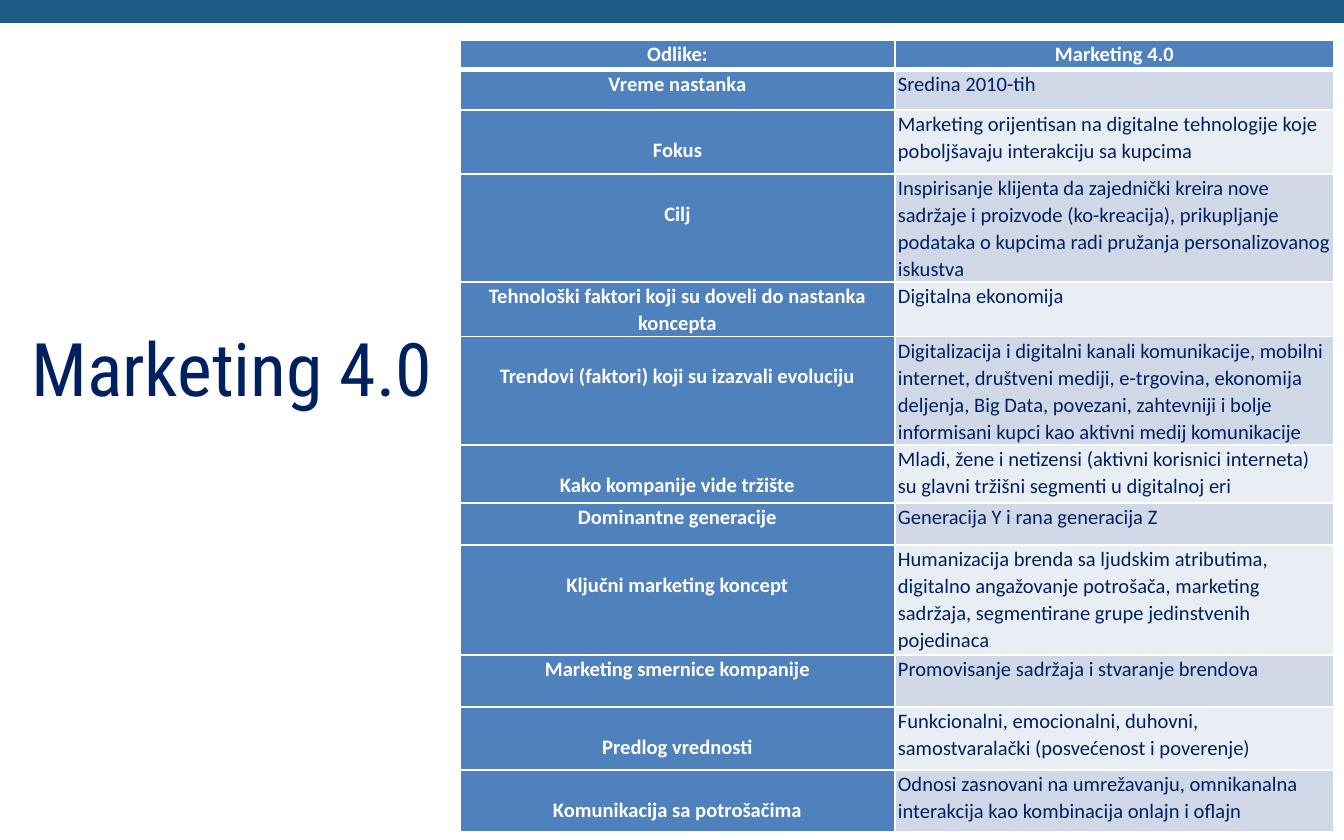
"""Build the Marketing 4.0 feature table slide."""
import pptx
import pptx.dml.color
import pptx.enum.shapes
import pptx.enum.text
import pptx.oxml
import pptx.oxml.ns
import pptx.util

TITLE = "Marketing 4.0"
HEADER = ("Odlike:", "Marketing 4.0", 30, False)
FEATURES = [
    ("Vreme nastanka", "Sredina 2010-tih", 40, False),
    ("Fokus", "Marketing orijentisan na digitalne tehnologije koje poboljšavaju "
     "interakciju sa kupcima", 64, True),
    ("Cilj", "Inspirisanje klijenta da zajednički kreira nove sadržaje i proizvode "
     "(ko-kreacija), prikupljanje podataka o kupcima radi pružanja "
     "personalizovanog iskustva", 108, True),
    ("Tehnološki faktori koji su doveli do nastanka koncepta",
     "Digitalna ekonomija", 54, False),
    ("Trendovi (faktori) koji su izazvali evoluciju",
     "Digitalizacija i digitalni kanali komunikacije, mobilni internet, društveni "
     "mediji, e-trgovina, ekonomija deljenja, Big Data, povezani, zahtevniji i bolje "
     "informisani kupci kao aktivni medij komunikacije", 108, True),
    ("Kako kompanije vide tržište",
     "Mladi, žene i netizensi (aktivni korisnici interneta) su glavni tržišni "
     "segmenti u digitalnoj eri", 58, True),
    ("Dominantne generacije", "Generacija Y i rana generacija Z", 42, False),
    ("Ključni marketing koncept",
     "Humanizacija brenda sa ljudskim atributima, digitalno angažovanje potrošača, "
     "marketing sadržaja, segmentirane grupe jedinstvenih pojedinaca", 110, True),
    ("Marketing smernice kompanije",
     "Promovisanje sadržaja i stvaranje brendova", 52, False),
    ("Predlog vrednosti", "Funkcionalni, emocionalni, duhovni, samostvaralački "
     "(posvećenost i poverenje)", 63, True),
    ("Komunikacija sa potrošačima", "Odnosi zasnovani na umrežavanju, omnikanalna "
     "interakcija kao kombinacija onlajn i oflajn", 62, True),
]
THEME = {
    "bar": "1D5B85", "accent": "4F81BD", "bands": ("D0D8E8", "E9EDF4"),
    "ink": "002060", "white": "FFFFFF",
    "title_font": "Roboto Condensed", "title_size": 39.6,
    "body_font": "Calibri", "body_size": 11, "line_spacing": 1.07,
}
SLIDE_SIZE = (1344, 840)
BAR_BOX = (0, 0, 1344, 23)
TITLE_BOX = (-12, 339, 488, 56)
TABLE_ORIGIN = (460, 40)
COLUMNS = (435, 439)
CELL_INSET = 3
LABEL_DROP = 26


def px(length):
    return round(length * 9144000 / 1344)


def color(name):
    return pptx.dml.color.RGBColor.from_string(name)


def style_text(para, font, size, ink, bold, centered):
    align = pptx.enum.text.PP_ALIGN
    para.alignment = align.CENTER if centered else align.LEFT
    for span in para.runs:
        span.font.name = font
        span.font.size = pptx.util.Pt(size)
        span.font.color.rgb = color(ink)
        span.font.bold = bold


def add_borders(cell, bottom_width):
    properties = cell._tc.get_or_add_tcPr()
    for index, side in enumerate("LRTB"):
        width = pptx.util.Pt(bottom_width if side == "B" else 1)
        properties.insert(index, pptx.oxml.parse_xml(
            f'<a:ln{side} {pptx.oxml.ns.nsdecls("a")} w="{width}"><a:solidFill>'
            f'<a:srgbClr val="{THEME["white"]}"/></a:solidFill></a:ln{side}>'))


def fill_cell(cell, text, fill, is_label, drop, bottom_width):
    cell.margin_left = cell.margin_right = px(CELL_INSET)
    cell.margin_top = px(LABEL_DROP if drop else 0)
    cell.margin_bottom = 0
    cell.vertical_anchor = pptx.enum.text.MSO_ANCHOR.TOP
    cell.fill.solid()
    cell.fill.fore_color.rgb = color(fill)
    add_borders(cell, bottom_width)
    cell.text_frame.text = text
    para = cell.text_frame.paragraphs[0]
    para.line_spacing = THEME["line_spacing"]
    ink = THEME["white"] if is_label else THEME["ink"]
    style_text(para, THEME["body_font"], THEME["body_size"], ink, is_label, is_label)


def add_bar(page):
    bar = page.shapes.add_shape(pptx.enum.shapes.MSO_SHAPE.RECTANGLE, *map(px, BAR_BOX))
    bar.shadow.inherit = False
    bar.fill.solid()
    bar.fill.fore_color.rgb = color(THEME["bar"])
    bar.line.fill.background()


def set_title(page):
    title = page.shapes.title
    title.left, title.top, title.width, title.height = map(px, TITLE_BOX)
    title.text_frame.text = TITLE
    title.text_frame.word_wrap = True
    title.text_frame.auto_size = pptx.enum.text.MSO_AUTO_SIZE.NONE
    title.text_frame.vertical_anchor = pptx.enum.text.MSO_ANCHOR.MIDDLE
    style_text(title.text_frame.paragraphs[0], THEME["title_font"],
               THEME["title_size"], THEME["ink"], False, True)


def add_feature_table(page):
    rows = [HEADER, *FEATURES]
    size = (sum(COLUMNS), sum(row[2] for row in rows))
    table = page.shapes.add_table(
        len(rows), len(COLUMNS), *map(px, TABLE_ORIGIN + size)).table
    for column, width in zip(table.columns, COLUMNS):
        column.width = px(width)
    for index, (label, value, height, drop) in enumerate(rows):
        table.rows[index].height = px(height)
        is_header = index == 0
        value_fill = THEME["accent"] if is_header else THEME["bands"][(index - 1) % 2]
        bottom_width = 3 if is_header else 1
        fill_cell(table.cell(index, 0), label, THEME["accent"], True, drop, bottom_width)
        fill_cell(table.cell(index, 1), value, value_fill, is_header, False, bottom_width)


def main():
    deck = pptx.Presentation()
    deck.slide_width, deck.slide_height = map(px, SLIDE_SIZE)
    page = deck.slides.add_slide(deck.slide_layouts[5])
    add_bar(page)
    set_title(page)
    add_feature_table(page)
    deck.save("out.pptx")


if __name__ == "__main__":
    main()
